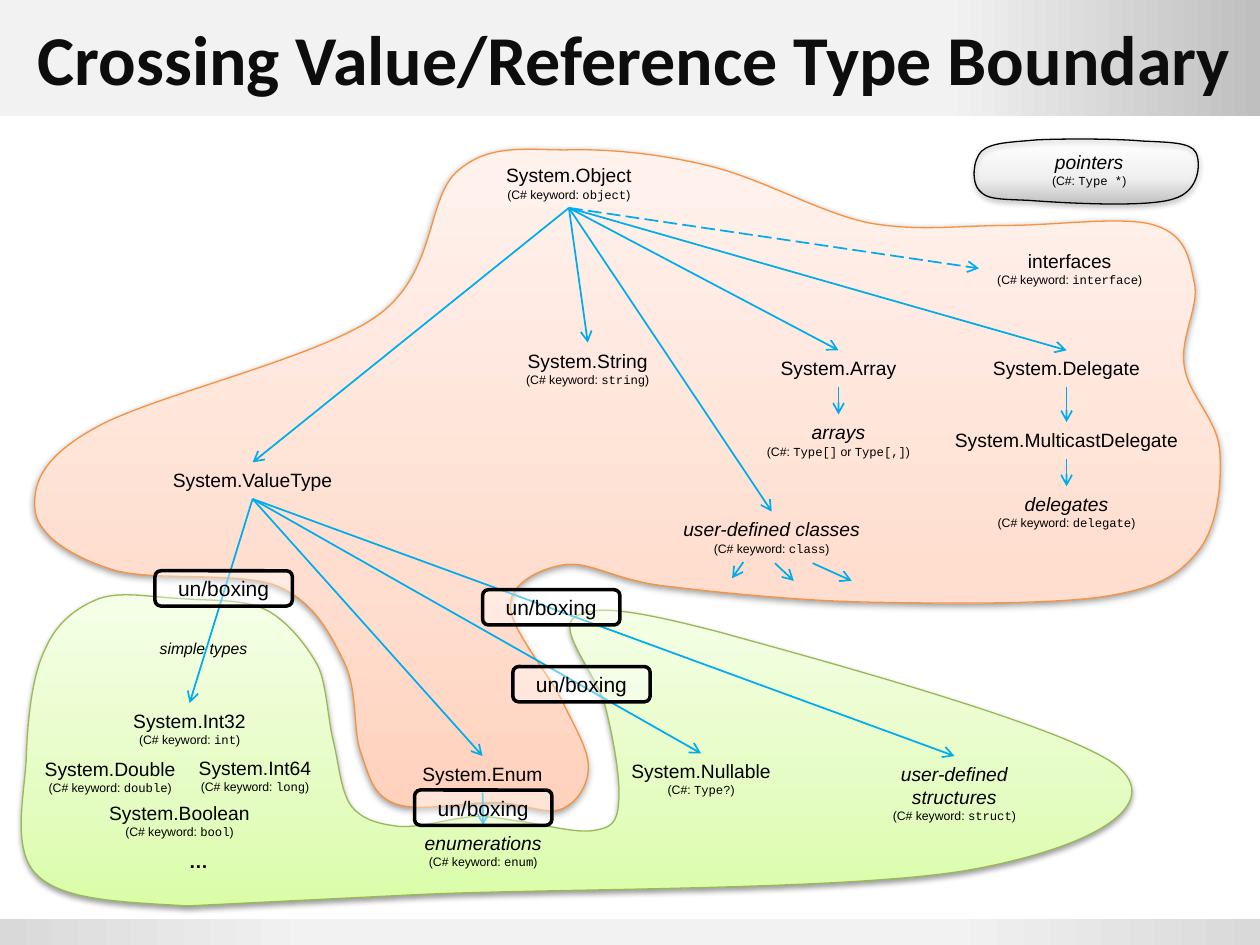
import pptx
import pptx.util
from lxml import etree
from pptx.dml.color import RGBColor
from pptx.enum.dml import MSO_LINE
from pptx.enum.shapes import MSO_CONNECTOR, MSO_SHAPE
from pptx.enum.text import MSO_ANCHOR, MSO_AUTO_SIZE, PP_ALIGN
from pptx.oxml.ns import qn

BOTTOM, TOP, LEFT = 2, 0, 1


def color(value):
    return RGBColor.from_string(value)


def inches(value):
    """Length on the slide's inch grid."""
    return pptx.util.Cm(value * 2.54)


def add_color(parent, value, opacity=100):
    node = etree.SubElement(parent, qn("a:srgbClr"), val=value)
    if opacity < 100:
        etree.SubElement(node, qn("a:alpha"), val=str(opacity * 1000))


class TypeMap:
    """Style of the diagram and the slide being drawn."""
    font, code_font, title_font = "Arial", "Courier New", "Calibri"
    ink, arrow_color = "000000", "00ACEB"

    def __init__(self, page):
        self.page = page
        self.shapes = page.shapes

    def gradient(self, shape, stops, angle=0):
        shape.fill.gradient()
        shape.fill.gradient_angle = angle
        stop_list = shape._element.spPr.find(qn("a:gradFill")).find(qn("a:gsLst"))
        stop_list[:] = []
        for position, *shade in stops:
            stop = etree.SubElement(stop_list, qn("a:gs"), pos=str(position * 1000))
            add_color(stop, *shade)

    def bar(self, top, height, stops):
        bar = self.shapes.add_shape(MSO_SHAPE.RECTANGLE, 0, inches(top), inches(10), inches(height))
        self.gradient(bar, stops)
        bar.line.fill.background()
        bar.shadow.inherit = False

    def region(self, start, steps, stops, outline):
        """Closed outline; a step holds one point (straight) or three (curve)."""
        builder = self.shapes.build_freeform(inches(start[0]), inches(start[1]))
        builder.add_line_segments([(inches(s[-2]), inches(s[-1])) for s in steps], close=True)
        region = builder.convert_to_shape()
        segments = list(region._element.spPr.iter(qn("a:lnTo")))
        for segment, step in zip(segments, steps):
            if len(step) == 2:
                continue
            segment.tag = qn("a:cubicBezTo")
            segment[:] = []
            for x, y in zip(step[::2], step[1::2]):
                etree.SubElement(segment, qn("a:pt"), x=str(inches(x) - region.left),
                                 y=str(inches(y) - region.top))
        self.gradient(region, stops, 90)
        region.line.color.rgb = color(outline)
        region.line.width = pptx.util.Pt(0.75)
        region.shadow.inherit = False
        effects = region._element.spPr.find(qn("a:effectLst"))
        shadow = etree.SubElement(effects, qn("a:outerShdw"), blurRad=str(pptx.util.Pt(3.1)),
                                  dist=str(pptx.util.Pt(1.6)), dir="5400000", rotWithShape="0")
        add_color(shadow, self.ink, 38)

    def title(self, text):
        title = self.shapes.title
        title._element.getparent().append(title._element)  # in front of the bar
        title.left, title.top = inches(0.2), 0
        title.width, title.height = inches(9.8), inches(0.92)
        frame = title.text_frame
        frame.text = text
        frame.word_wrap = True
        frame.auto_size = MSO_AUTO_SIZE.NONE
        frame.vertical_anchor = MSO_ANCHOR.MIDDLE
        para = frame.paragraphs[0]
        para.alignment = PP_ALIGN.LEFT
        self.style(para, 40, "0D0D0D", self.title_font)
        para.font.bold = True

    def style(self, para, size, ink=ink, font=font):
        para.font.name = font
        para.font.size = pptx.util.Pt(size)
        para.font.color.rgb = color(ink)

    def label(self, left, top, width, height, heading, note="", italic=False, bold=False, size=11):
        """Heading with an optional small note, whose code stands between bars."""
        box = self.shapes.add_textbox(inches(left), inches(top), inches(width), inches(height))
        frame = box.text_frame
        frame.word_wrap = True
        frame.auto_size = MSO_AUTO_SIZE.SHAPE_TO_FIT_TEXT
        para = frame.paragraphs[0]
        para.alignment = PP_ALIGN.CENTER
        self.style(para, size)
        para.font.bold = bold
        span = para.add_run()
        span.text = heading
        span.font.italic = italic
        if note:
            para.add_line_break()
            for index, piece in enumerate(note.split("|")):
                span = para.add_run()
                span.text = piece
                span.font.size = pptx.util.Pt(7)
                span.font.name = self.code_font if index % 2 else self.font
        return box

    def arrow(self, start=(0, 0), end=(0, 0), source=None, target=None, side=TOP, dashed=False):
        line = self.shapes.add_connector(MSO_CONNECTOR.STRAIGHT, *map(inches, start + end))
        if source is not None:
            line.begin_connect(source, BOTTOM)
            line.end_connect(target, side)
        line.line.color.rgb = color(self.arrow_color)
        line.line.width = pptx.util.Pt(1)
        if dashed:
            line.line.dash_style = MSO_LINE.LONG_DASH
        properties = line._element.spPr
        etree.SubElement(properties.find(qn("a:ln")), qn("a:tailEnd"), type="arrow")
        etree.SubElement(properties, qn("a:effectLst"))

    def badge(self, left, top, text):
        badge = self.shapes.add_shape(MSO_SHAPE.ROUNDED_RECTANGLE, inches(left), inches(top),
                                      inches(1.09), inches(0.28))
        badge.fill.solid()
        badge.fill.fore_color.rgb = color("FFFFFF")
        white = badge._element.spPr.find(qn("a:solidFill"))[0]
        etree.SubElement(white, qn("a:alpha"), val="40000")
        badge.line.color.rgb = color(self.ink)
        badge.line.width = pptx.util.Pt(2)
        badge.shadow.inherit = False
        badge.text_frame.text = text
        badge.text_frame.vertical_anchor = MSO_ANCHOR.MIDDLE
        para = badge.text_frame.paragraphs[0]
        para.alignment = PP_ALIGN.CENTER
        self.style(para, 12)


REFERENCE_TYPES = [
    (4.16, 1.19, 3.88, 1.14, 3.63, 1.36), (3.38, 1.58, 3.47, 2.17, 2.99, 2.51),
    (2.51, 2.85, 1.2, 3.14, 0.75, 3.4), (0.3, 3.65, 0.26, 3.87, 0.28, 4.06),
    (0.31, 4.25, 0.57, 4.42, 0.89, 4.52), (1.21, 4.62, 1.89, 4.53, 2.2, 4.65),
    (2.5, 4.78, 2.62, 5.03, 2.73, 5.25), (2.84, 5.47, 2.8, 5.77, 2.86, 5.96),
    (2.93, 6.15, 2.95, 6.31, 3.14, 6.38), (3.32, 6.45, 3.73, 6.36, 3.95, 6.37),
    (4.17, 6.38, 4.34, 6.47, 4.46, 6.42), (4.58, 6.37, 4.67, 6.23, 4.67, 6.09),
    (4.67, 5.94, 4.56, 5.77, 4.46, 5.56), (4.35, 5.34, 4.04, 4.98, 4.05, 4.8),
    (4.06, 4.62, 4.29, 4.51, 4.49, 4.48), (4.7, 4.46, 4.87, 4.6, 5.27, 4.65),
    (5.68, 4.7, 6.34, 4.77, 6.93, 4.78), (7.51, 4.79, 8.36, 4.8, 8.79, 4.73),
    (9.22, 4.66, 9.37, 4.55, 9.52, 4.36), (9.67, 4.16, 9.7, 3.81, 9.68, 3.57),
    (9.66, 3.33, 9.43, 3.13, 9.4, 2.91), (9.36, 2.69, 9.52, 2.43, 9.48, 2.25),
    (9.44, 2.06, 9.42, 1.87, 9.17, 1.79), (8.93, 1.71, 8.38, 1.79, 8, 1.79),
    (7.62, 1.79, 7.29, 1.84, 6.9, 1.77), (6.51, 1.69, 6.05, 1.42, 5.64, 1.32),
    (5.24, 1.22, 4.83, 1.18, 4.49, 1.19)]
VALUE_TYPES = [
    (1.2, 4.74, 0.97, 4.69, 0.79, 4.75), (0.61, 4.82, 0.45, 4.94, 0.36, 5.15),
    (0.26, 5.35, 0.22, 5.69, 0.21, 5.99), (0.2, 6.29, 0.08, 6.75, 0.3, 6.95),
    (0.51, 7.15, 0.99, 7.16, 1.49, 7.19), (3.32, 7.1),
    (4.36, 7.05, 6.79, 7.07, 7.72, 6.9), (8.64, 6.73, 9.22, 6.41, 8.89, 6.1),
    (8.56, 5.79, 6.44, 5.22, 5.72, 5.02), (4.99, 4.83, 4.71, 4.8, 4.56, 4.9),
    (4.41, 5, 4.76, 5.38, 4.81, 5.63), (4.87, 5.87, 4.93, 6.21, 4.91, 6.37),
    (4.9, 6.53, 4.85, 6.57, 4.72, 6.59), (4.59, 6.62, 4.29, 6.54, 4.14, 6.52),
    (3.98, 6.5, 3.93, 6.48, 3.77, 6.48), (3.6, 6.49, 3.34, 6.57, 3.17, 6.56),
    (3.01, 6.54, 2.88, 6.51, 2.79, 6.4), (2.7, 6.28, 2.69, 6.05, 2.64, 5.86),
    (2.6, 5.68, 2.59, 5.42, 2.52, 5.28), (2.45, 5.15, 2.29, 4.93, 2.11, 4.84),
    (1.93, 4.75, 1.64, 4.77, 1.42, 4.75)]
POINTER_TYPES = [
    (8.44, 1.1, 8.86, 1.1, 9.07, 1.12), (9.28, 1.13, 9.45, 1.13, 9.49, 1.21),
    (9.53, 1.28, 9.53, 1.52, 9.31, 1.58), (9.09, 1.65, 8.42, 1.61, 8.16, 1.59),
    (7.9, 1.58, 7.83, 1.58, 7.77, 1.51), (7.71, 1.45, 7.72, 1.27, 7.79, 1.2),
    (7.87, 1.13, 8.02, 1.13, 8.23, 1.11)]


def main():
    deck = pptx.Presentation()
    deck.slide_width, deck.slide_height = inches(10), inches(7.5)
    chart = TypeMap(deck.slides.add_slide(deck.slide_layouts[5]))

    # Header and footer bars, regions, title
    chart.bar(0, 0.92, [(75, "F2F2F2"), (100, "BFBFBF")])
    chart.bar(7.29, 0.21, [(0, "D9D9D9"), (25, "F2F2F2"), (75, "F2F2F2"), (100, "D9D9D9")])
    chart.region((4.49, 1.19), REFERENCE_TYPES, [(0, "FFD2BD"), (35, "FFDED0"), (100, "FFF2ED")], "F69240")
    chart.region((1.42, 4.75), VALUE_TYPES, [(0, "DAFDA7"), (35, "E4FCC2"), (100, "F5FFE7")], "98B955")
    chart.region((8.23, 1.11), POINTER_TYPES,
                 [(0, "BDBDBD", 50), (35, "D1D1D1", 13), (100, "EEEEEE", 0)], "000000")
    chart.title("Crossing Value/Reference Type Boundary")

    # Type names with a keyword: left, top, width, height, heading, keyword, italic
    nodes = {}
    for *place, name, keyword, italic in [
            (3.65, 1.25, 1.73, 0.4, "System.Object", "object", False),
            (5.26, 4.06, 1.73, 0.4, "user-defined classes", "class", True),
            (7.6, 3.86, 1.73, 0.4, "delegates", "delegate", True),
            (3.8, 2.72, 1.73, 0.4, "System.String", "string", False),
            (7.77, 1.93, 1.44, 0.4, "interfaces", "interface", False),
            (6.71, 6, 1.73, 0.61, "user-defined structures", "struct", True),
            (2.97, 6.55, 1.73, 0.4, "enumerations", "enum", True),
            (0.64, 5.58, 1.73, 0.4, "System.Int32", "int", False),
            (1.16, 5.95, 1.73, 0.4, "System.Int64", "long", False),
            (0.01, 5.96, 1.73, 0.4, "System.Double", "double", False),
            (0.56, 6.31, 1.73, 0.4, "System.Boolean", "bool", False)]:
        nodes[name] = chart.label(*place, name, f"(C# keyword: |{keyword}|)", italic)

    # Type names with a syntax note, and plain ones
    chart.label(7.78, 1.14, 1.73, 0.4, "pointers", "(C#: |Type *|)", True)
    nodes["arrays"] = chart.label(5.79, 3.29, 1.73, 0.4, "arrays", "(C#: |Type[]| or |Type[,]|)", True)
    nodes["System.Nullable"] = chart.label(4.7, 5.98, 1.73, 0.4, "System.Nullable", "(C#: |Type?|)")
    for left, top, width, name in [
            (7.6, 2.78, 1.73, "System.Delegate"), (7.21, 3.35, 2.51, "System.MulticastDelegate"),
            (1.06, 3.67, 1.89, "System.ValueType"), (3.05, 6, 1.56, "System.Enum"),
            (5.71, 2.78, 1.89, "System.Array")]:
        nodes[name] = chart.label(left, top, width, 0.29, name)
    chart.label(1.32, 6.69, 0.51, 0.29, "…", bold=True)
    chart.label(0.83, 5.02, 1.57, 0.25, "simple types", italic=True, size=9)

    # Inheritance arrows
    children = {
        "System.Object": ["System.Array", "System.Delegate", "user-defined classes",
                          "System.String", "System.ValueType"],
        "System.Array": ["arrays"],
        "System.Delegate": ["System.MulticastDelegate"],
        "System.MulticastDelegate": ["delegates"],
        "System.ValueType": ["System.Int32", "System.Enum", "System.Nullable", "user-defined structures"],
        "System.Enum": ["enumerations"]}
    for parent, names in children.items():
        for name in names:
            chart.arrow(source=nodes[parent], target=nodes[name])
    chart.arrow(source=nodes["System.Object"], target=nodes["interfaces"], side=LEFT, dashed=True)
    for start, end in [((6.45, 4.47), (6.76, 4.61)), ((6.15, 4.47), (6.3, 4.61)), ((5.9, 4.46), (5.81, 4.59))]:
        chart.arrow(start, end)

    # Boundary crossings
    for left, top in [(1.23, 4.53), (3.29, 6.27), (4.07, 5.29), (3.83, 4.68)]:
        chart.badge(left, top, "un/boxing")

    deck.save("out.pptx")


if __name__ == "__main__":
    main()
